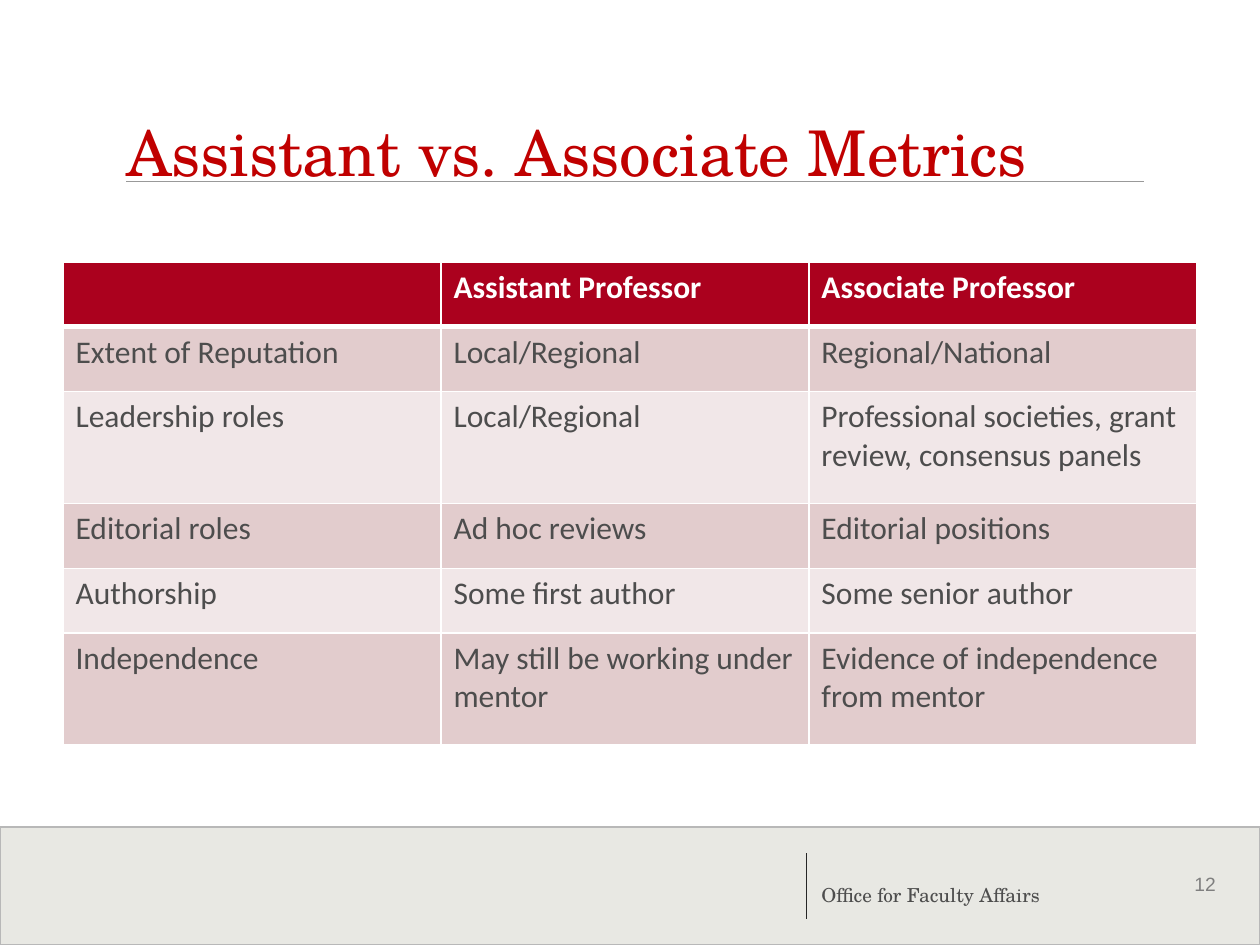
from lxml import etree
from pptx import Presentation
from pptx.dml.color import RGBColor
from pptx.enum.shapes import MSO_CONNECTOR, MSO_SHAPE
from pptx.enum.text import MSO_ANCHOR, MSO_AUTO_SIZE, PP_ALIGN
from pptx.oxml import parse_xml
from pptx.oxml.ns import nsdecls, qn
from pptx.util import Inches, Pt

STRAIGHT, RECTANGLE = MSO_CONNECTOR.STRAIGHT, MSO_SHAPE.RECTANGLE
TOP, BOTTOM, LEFT = MSO_ANCHOR.TOP, MSO_ANCHOR.BOTTOM, PP_ALIGN.LEFT

presentation = Presentation()
presentation.slide_width, presentation.slide_height = Inches(10), Inches(7.5)
slide = presentation.slides.add_slide(presentation.slide_layouts[5])
shapes = slide.shapes


def box(*percents):
    """Turn percentages of the slide's width and height, in turn, into lengths."""
    sides = (presentation.slide_width, presentation.slide_height) * 2
    return [int(side * percent / 100) for side, percent in zip(sides, percents)]


def paint(color_format, color):
    color_format.rgb = RGBColor.from_string(color)


# Footer band
band = shapes.add_shape(RECTANGLE, *box(0, 87.5, 100, 12.5))
band.shadow.inherit = False
band.fill.solid()
paint(band.fill.fore_color, "D3D3C9")
band_color = band.fill._xPr.find(qn("a:solidFill"))[0]
etree.SubElement(band_color, qn("a:alpha")).set("val", "50000")
paint(band.line.color, "B8B8B8")
band.line.width = Pt(0.75)

# Footer divider and title rule
for ends, color in [((64, 90.27, 64, 97.2), "262626"),
                    ((10, 19.2, 90.8, 19.2), "999999")]:
    rule = shapes.add_connector(STRAIGHT, *box(*ends))
    paint(rule.line.color, color)
    rule.line.width = Pt(0.75)
    etree.SubElement(rule._element.spPr, qn("a:effectLst"))

# Title, slide number and office name
title = shapes.title
title.left, title.top, title.width, title.height = box(10, 4, 80.8, 16.67)
number = shapes.add_textbox(*box(91.8, 91.6, 7, 4.9))
office = shapes.add_textbox(*box(64.2, 90.27, 28, 6.27))
for shape, text, font_name, size, color, anchor, inset in [
        (title, "Assistant vs. Associate Metrics", "TeX Gyre Schola", 36, "C00000", BOTTOM, 0),
        (number, "12", "Arial", 11, "7F7F7F", TOP, 0.3),
        (office, "Office for Faculty Affairs", "TeX Gyre Schola", 11, "4D4D4D", BOTTOM, 0.1)]:
    frame_format = {"word_wrap": True, "auto_size": MSO_AUTO_SIZE.NONE,
                    "vertical_anchor": anchor, "margin_left": Inches(inset)}
    for name, value in frame_format.items():
        setattr(shape.text_frame, name, value)
    paragraph = shape.text_frame.paragraphs[0]
    paragraph.text = text
    paragraph.alignment = LEFT
    for name, value in {"name": font_name, "size": Pt(size)}.items():
        setattr(paragraph.font, name, value)
    paint(paragraph.font.color, color)

# Metrics table
metrics = [
    ("", "Assistant Professor", "Associate Professor"),
    ("Extent of Reputation", "Local/Regional", "Regional/National"),
    ("Leadership roles", "Local/Regional",
     "Professional societies, grant review, consensus panels"),
    ("Editorial roles", "Ad hoc reviews", "Editorial positions"),
    ("Authorship", "Some first author", "Some senior author"),
    ("Independence", "May still be working under mentor",
     "Evidence of independence from mentor"),
]
column_shares = (30, 29.2, 30.8)
row_shares = (6.85, 6.85, 11.87, 6.85, 6.85, 11.87)
table = shapes.add_table(len(metrics), len(column_shares),
                         *box(5, 27.73, sum(column_shares), sum(row_shares))).table
for column, share in zip(table.columns, column_shares):
    column.width = box(share)[0]
for row, share in zip(table.rows, row_shares):
    row.height = box(0, share)[1]

for row_index, texts in enumerate(metrics):
    header = row_index == 0
    fill = "AB011E" if header else ("F1E7E8", "E2CCCD")[row_index % 2]
    borders = {"L": 1, "R": 1, "T": 3 if row_index == 1 else 1, "B": 3 if header else 1}
    for column_index, text in enumerate(texts):
        cell = table.cell(row_index, column_index)
        cell.fill.solid()
        paint(cell.fill.fore_color, fill)
        paragraph = cell.text_frame.paragraphs[0]
        paragraph.text = text
        for name, value in {"name": "Calibri", "size": Pt(18), "bold": header}.items():
            setattr(paragraph.font, name, value)
        paint(paragraph.font.color, "FFFFFF" if header else "4D4D4D")
        properties = cell._tc.get_or_add_tcPr()
        for position, (side, width) in enumerate(borders.items()):
            properties.insert(position, parse_xml(
                f'<a:ln{side} {nsdecls("a")} w="{Pt(width)}"><a:solidFill>'
                f'<a:srgbClr val="FFFFFF"/></a:solidFill></a:ln{side}>'))

presentation.save("out.pptx")
